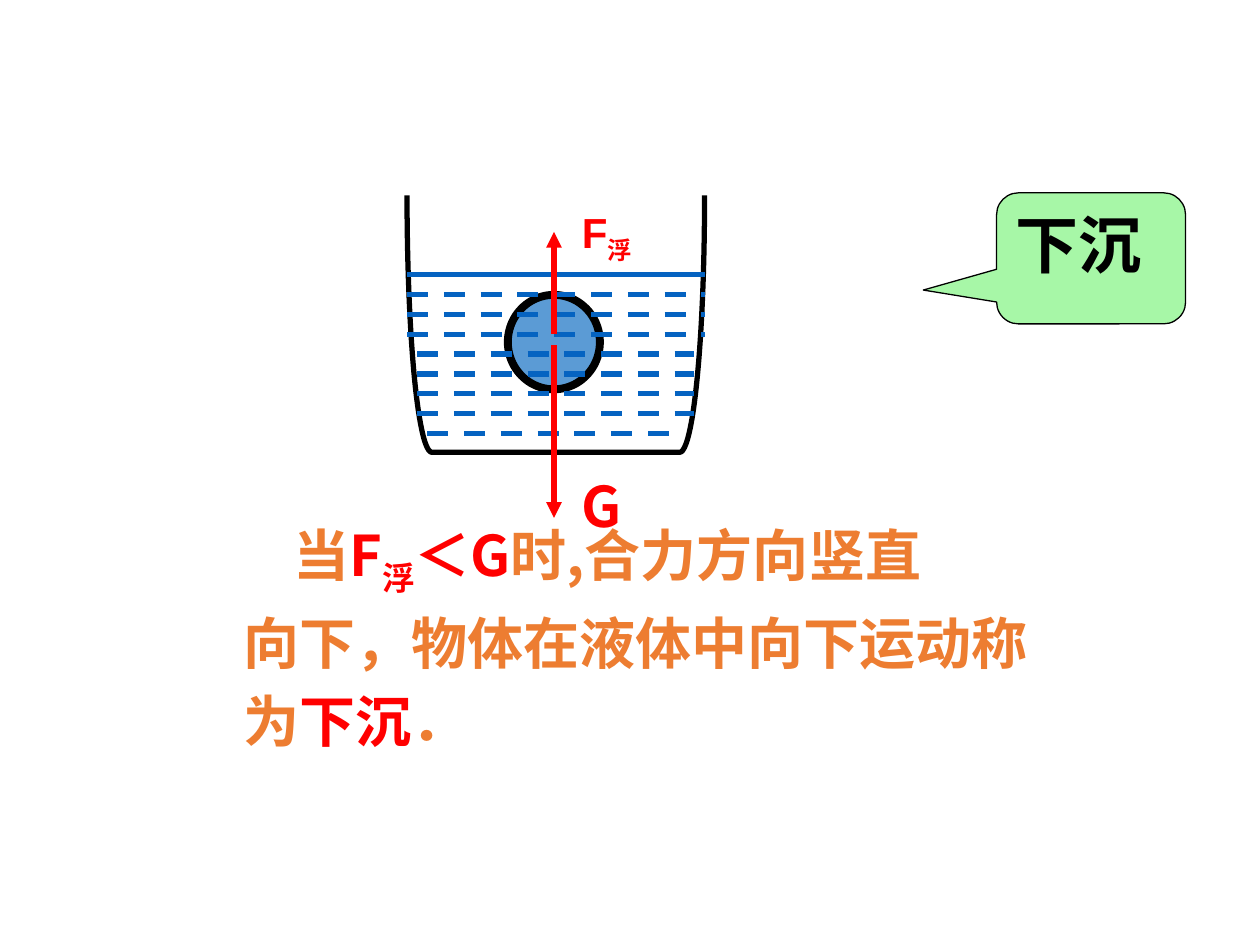
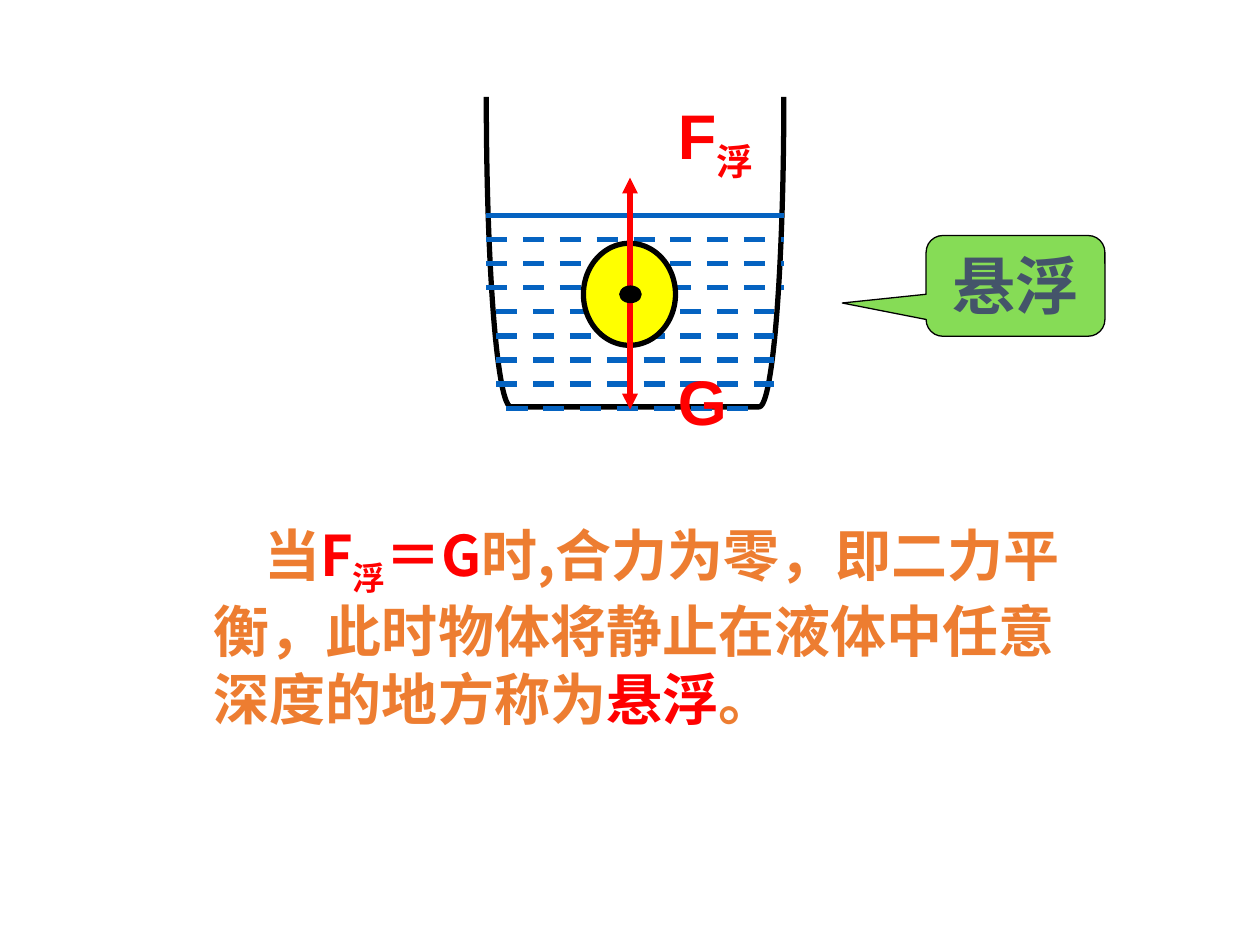
from dataclasses import dataclass
from typing import NamedTuple

from lxml import etree
from pptx import Presentation
from pptx.dml.color import RGBColor
from pptx.enum.dml import MSO_LINE
from pptx.enum.shapes import MSO_CONNECTOR, MSO_SHAPE
from pptx.enum.text import MSO_ANCHOR, PP_ALIGN
from pptx.oxml.ns import qn
from pptx.shapes.autoshape import Shape
from pptx.shapes.connector import Connector
from pptx.slide import Slide
from pptx.text.text import TextFrame
from pptx.util import Pt

STRAIGHT = MSO_CONNECTOR.STRAIGHT
OVAL = MSO_SHAPE.OVAL
BRACKET = MSO_SHAPE.LEFT_BRACKET
CALLOUT = MSO_SHAPE.ROUNDED_RECTANGULAR_CALLOUT
DASH = MSO_LINE.DASH
TOP = MSO_ANCHOR.TOP
LEFT, CENTER = PP_ALIGN.LEFT, PP_ALIGN.CENTER

COLORS = {
    "ink": "000000",
    "force": "FF0000",
    "prose": "ED7D31",
    "water": "0563C1",
    "blue": "5B9BD5",
    "yellow": "FFFF00",
    "mint": "A7F7A7",
    "green": "86DC56",
    "slate": "44546A",
}
HAN = "Noto Sans CJK SC"
LATIN = "Arial"
STROKE = 3
ROWS = 9
TAPER = 5.76
INDENT = 28.7


class Box(NamedTuple):
    left: float
    top: float
    width: float
    height: float


class Bit(NamedTuple):
    text: str
    color: str = "force"
    sub: bool = False


class Style(NamedTuple):
    size: float
    font: str
    color: str = "force"


BUOYANT = [Bit("F"), Bit("浮", sub=True)]
WEIGHT = [Bit("G")]


@dataclass
class Label:
    box: Box
    bits: list[Bit]
    style: Style


@dataclass
class Bubble:
    box: Box
    text: str
    fill: str
    color: str
    tip: tuple[float, float]
    align: PP_ALIGN


@dataclass
class Cup:
    box: Box
    bend: float
    level: float
    step: float


@dataclass
class Ball:
    box: Box
    fill: str
    stroke: float


@dataclass
class Arrow:
    x: float
    start: float
    end: float


@dataclass
class Scene:
    cup: Cup
    ball: Ball
    sunk: bool
    arrows: list[Arrow]
    labels: list[Label]
    bubble: Bubble
    prose: list[list[Bit]]
    area: Box
    wrap: bool


def rgb(name: str) -> RGBColor:
    return RGBColor.from_string(COLORS[name])


def write(frame: TextFrame, lines: list[list[Bit]], style: Style,
          align: PP_ALIGN = LEFT, wrap: bool = True) -> None:
    frame.word_wrap = wrap
    frame.vertical_anchor = TOP
    for row, bits in enumerate(lines):
        para = frame.add_paragraph() if row else frame.paragraphs[0]
        para.alignment = align
        if row:
            para.space_before = Pt(style.size * 0.2)
        font = para.font
        font.size, font.bold, font.name = Pt(style.size), True, style.font
        font.color.rgb = rgb(style.color)
        base = para._p.pPr.find(qn("a:defRPr"))
        etree.SubElement(base, qn("a:ea"), typeface=HAN)
        for bit in bits:
            run = para.add_run()
            run.text = bit.text
            if bit.color != style.color:
                run.font.color.rgb = rgb(bit.color)
            if bit.sub:
                run._r.get_or_add_rPr().set("baseline", "-25000")


def add_form(slide: Slide, kind: MSO_SHAPE, box: Box, fill: str | None,
             stroke: float) -> Shape:
    form = slide.shapes.add_shape(kind, *map(Pt, box))
    form.shadow.inherit = False
    if fill:
        form.fill.solid()
        form.fill.fore_color.rgb = rgb(fill)
    else:
        form.fill.background()
    form.line.color.rgb = rgb("ink")
    form.line.width = Pt(stroke)
    return form


def add_line(slide: Slide, x1: float, y1: float, x2: float, y2: float,
             color: str) -> Connector:
    line = slide.shapes.add_connector(STRAIGHT, Pt(x1), Pt(y1), Pt(x2), Pt(y2))
    line.line.color.rgb = rgb(color)
    line.line.width = Pt(STROKE)
    etree.SubElement(line._element.spPr, qn("a:effectLst"))
    return line


def add_arrow(slide: Slide, arrow: Arrow) -> None:
    line = add_line(slide, arrow.x, arrow.start, arrow.x, arrow.end, "force")
    etree.SubElement(line.line._get_or_add_ln(), qn("a:tailEnd"), type="triangle")


def add_cup(slide: Slide, cup: Cup) -> None:
    left, top, width, height = cup.box
    shift = (width - height) / 2
    frame = Box(left + shift, top - shift, height, width)
    wall = add_form(slide, BRACKET, frame, None, STROKE)
    wall.rotation = 270
    wall.adjustments[0] = cup.bend
    for row in range(ROWS):
        inset = row // 4 * TAPER
        y = cup.level + row * cup.step
        line = add_line(slide, left + inset, y, left + width - inset, y, "water")
        if row:
            line.line.dash_style = DASH


def add_ball(slide: Slide, ball: Ball) -> None:
    add_form(slide, OVAL, ball.box, ball.fill, ball.stroke)


def add_text(slide: Slide, box: Box, lines: list[list[Bit]], style: Style,
             wrap: bool = True) -> Shape:
    text = slide.shapes.add_textbox(*map(Pt, box))
    write(text.text_frame, lines, style, wrap=wrap)
    return text


def add_prose(slide: Slide, scene: Scene) -> None:
    text = add_text(slide, scene.area, scene.prose, Style(32, HAN, "prose"), scene.wrap)
    first = text.text_frame.paragraphs[0]._p.get_or_add_pPr()
    first.set("marL", "0")
    first.set("indent", str(Pt(INDENT)))


def add_bubble(slide: Slide, bubble: Bubble) -> None:
    form = add_form(slide, CALLOUT, bubble.box, bubble.fill, 0.75)
    for spot, value in enumerate((*bubble.tip, 0.167)):
        form.adjustments[spot] = value
    style = Style(36, HAN, bubble.color)
    write(form.text_frame, [[Bit(bubble.text, bubble.color)]], style, bubble.align)
    form.text_frame.paragraphs[0].runs[0].font.color.rgb = rgb(bubble.color)


def draw(slide: Slide, scene: Scene) -> None:
    if scene.sunk:
        add_ball(slide, scene.ball)
    add_prose(slide, scene)
    add_cup(slide, scene.cup)
    if not scene.sunk:
        add_ball(slide, scene.ball)
    for label in scene.labels:
        add_text(slide, label.box, [label.bits], label.style)
    for arrow in scene.arrows:
        add_arrow(slide, arrow)
    add_bubble(slide, scene.bubble)


SINK = Scene(
    cup=Cup(Box(232.6, 111.6, 170, 146.9), 0.097, 157, 11.34),
    ball=Ball(Box(290.2, 168.5, 52.6, 54), "blue", 4.5),
    sunk=True,
    arrows=[Arrow(316.6, 197.3, 295.9), Arrow(316.6, 190.8, 132.5)],
    labels=[
        Label(Box(325.4, 265.7, 30.2, 45.4), WEIGHT, Style(32, HAN)),
        Label(Box(325.4, 114.5, 66.2, 36), BUOYANT, Style(24, LATIN)),
    ],
    bubble=Bubble(Box(569.5, 110.2, 108, 74.9), "下沉", "mint", "ink",
                  (-0.888, 0.242), LEFT),
    prose=[
        [Bit("当", "prose"), *BUOYANT, Bit("＜G"), Bit("时,合力方向竖直", "prose")],
        [Bit("向下，物体在液体中向下运动称", "prose")],
        [Bit("为", "prose"), Bit("下沉"), Bit("．", "prose")],
    ],
    area=Box(131.8, 293.8, 464.4, 176.4),
    wrap=False,
)

HOVER = Scene(
    cup=Cup(Box(277.9, 55.4, 170, 177.1), 0.083, 123.1, 13.77),
    ball=Ball(Box(333.4, 139, 52.6, 58.3), "yellow", 3),
    sunk=False,
    arrows=[Arrow(360, 168.5, 101.5), Arrow(360, 168.5, 234)],
    labels=[
        Label(Box(380.2, 51.8, 87.8, 50.4), BUOYANT, Style(36, LATIN)),
        Label(Box(380.2, 203.8, 41.8, 50.4), WEIGHT, Style(36, LATIN)),
    ],
    bubble=Bubble(Box(529.2, 134.6, 102.2, 57.6), "悬浮", "green", "slate",
                  (-0.969, 0.17), CENTER),
    prose=[[
        Bit("当", "prose"), *BUOYANT, Bit("＝G"),
        Bit("时,合力为零，即二力平衡，此时物体将静止在液体中任意深度的地方称为", "prose"),
        Bit("悬浮"), Bit("。", "prose"),
    ]],
    area=Box(115.2, 293.8, 516.2, 122.4),
    wrap=True,
)


def main() -> None:
    deck = Presentation()
    deck.slide_width, deck.slide_height = Pt(720), Pt(540)
    blank = deck.slide_layouts[6]
    draw(deck.slides.add_slide(blank), SINK)
    hover = deck.slides.add_slide(blank)
    draw(hover, HOVER)
    add_form(hover, OVAL, Box(354.2, 163.5, 12.2, 9.4), "ink", 0.75)
    deck.save("out.pptx")


if __name__ == "__main__":
    main()
